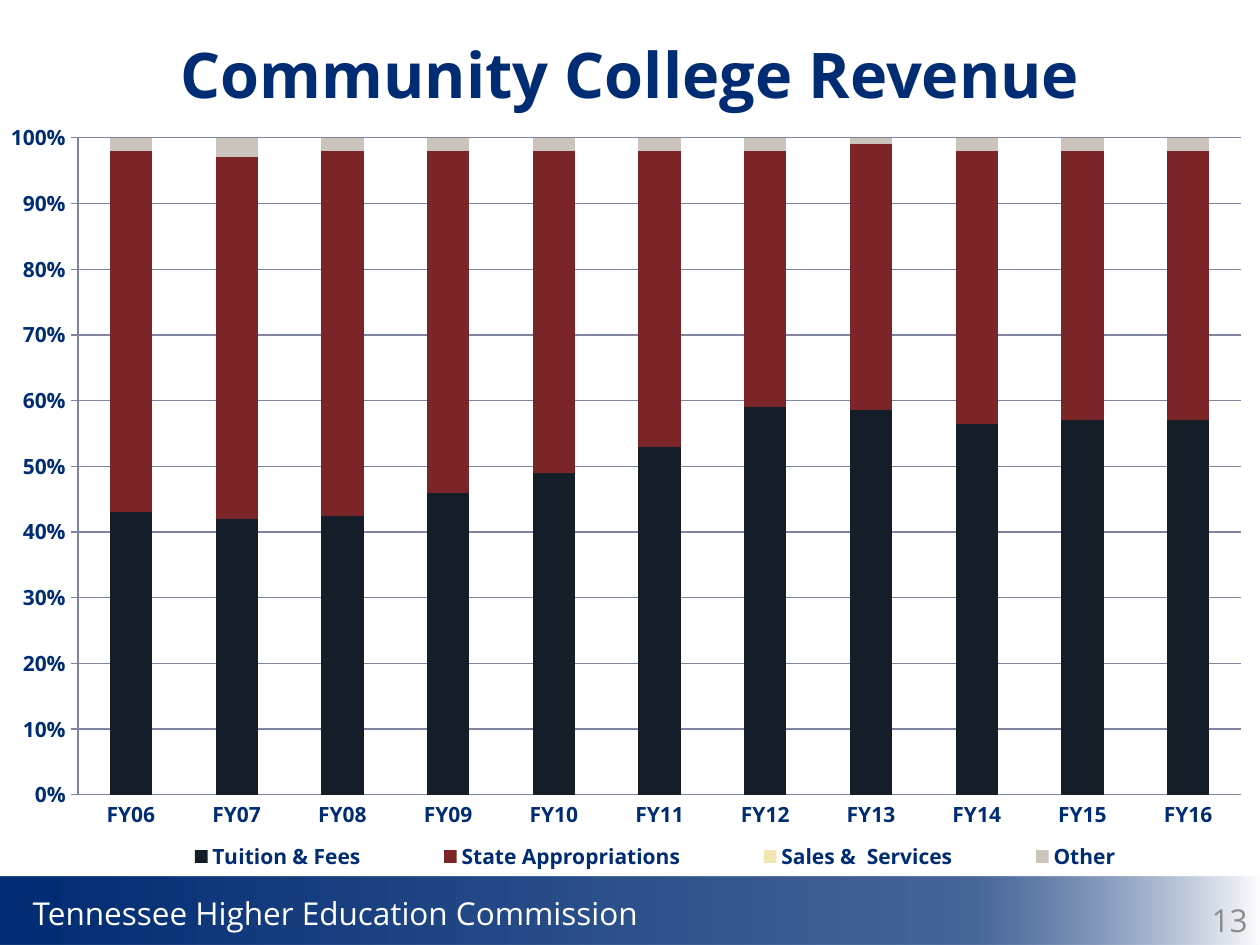
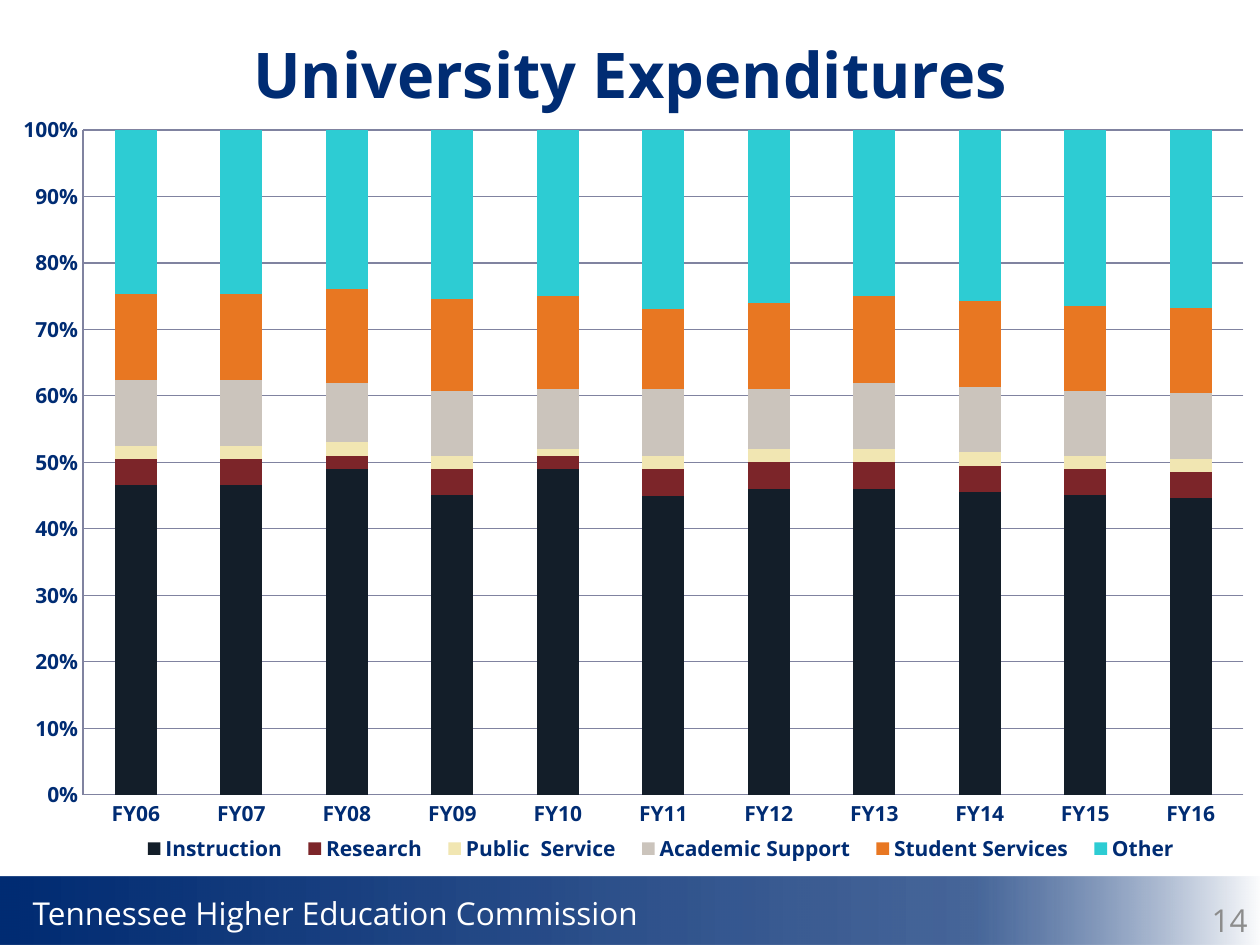
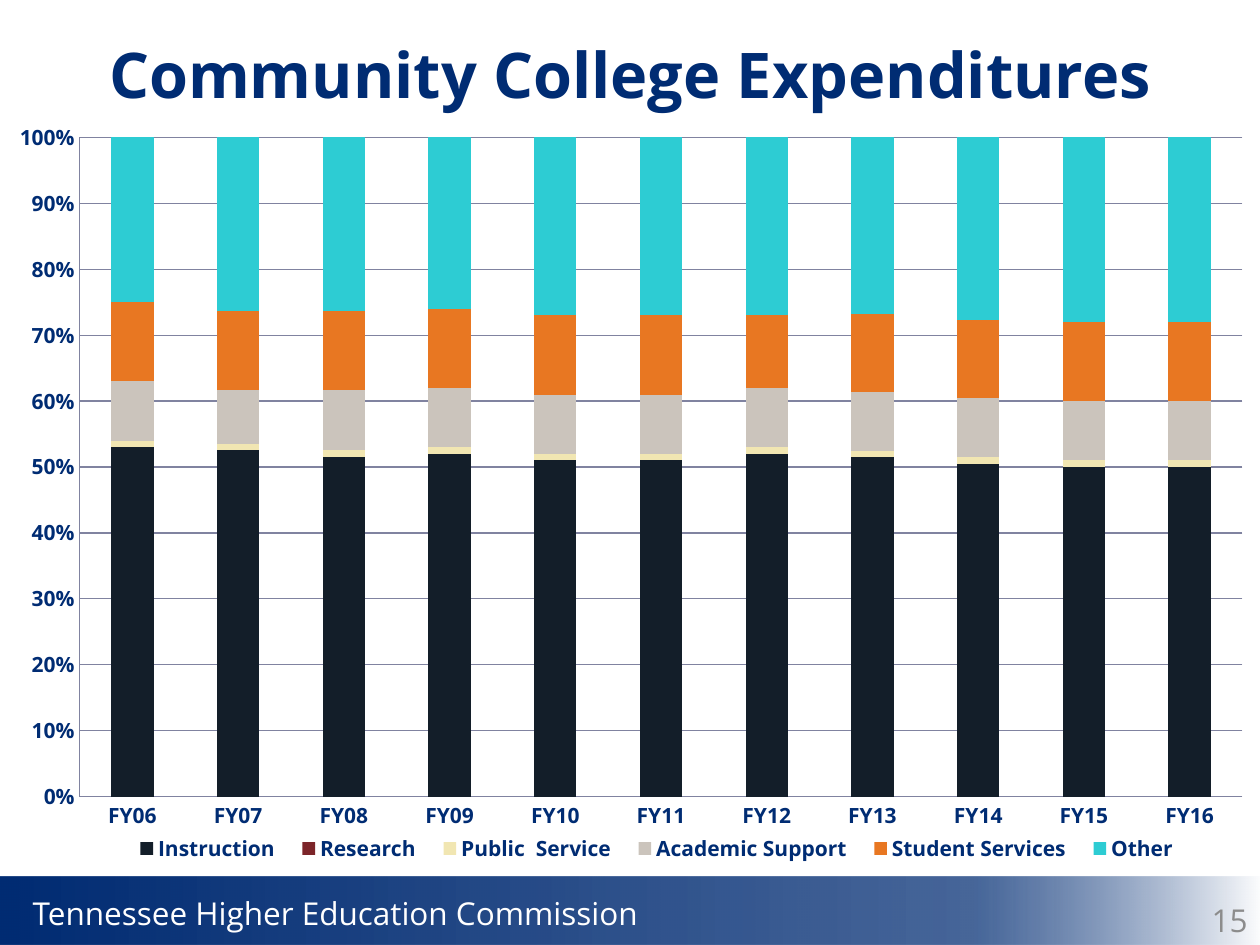
from dataclasses import dataclass

from lxml import etree
from pptx import Presentation
from pptx.chart import data
from pptx.dml import color
from pptx.enum import chart as kinds, shapes, text
from pptx.oxml import ns
from pptx.util import Cm, Pt

FONT = "Open Sans"
NAVY, WHITE, GREY, RULE = "002C73", "FFFFFF", "8C8C8C", "8083A0"
HUES = ["131E29", "7C2529", "F1E6B2", "CBC4BC", "E87722", "2DCCD3"]
YEARS = [f"FY{year:02}" for year in range(6, 17)]
FADE = [(0, NAVY, 100), (77, NAVY, 72), (100, WHITE, 100)]


@dataclass
class Box:
    left: float
    top: float
    width: float
    height: float

    def place(self) -> list:
        return [Cm(side) for side in (self.left, self.top, self.width, self.height)]


@dataclass
class Page:
    number: int
    title: str
    box: Box
    plot: tuple
    key: tuple
    rows: dict
    ticks: bool = False


BAND = Box(0, 17.68, 25.45, 1.37)
OWNER = Box(0.41, 17.9, 12.83, 1.02)
TITLE = Box(1.86, 0.2, 21.69, 2.54)
NUMBER = Box(19.48, 18.03, 5.92, 1.02)

PAGES = [
    Page(13, "Community College Revenue", Box(0, 2.33, 25.4, 15.44),
         (0.062, 0.029, 0.923, 0.858), (0.094, 0.94, 0.852, 0.055), {
             "Tuition & Fees": [43, 42, 42, 46, 49, 53, 59, 58, 57, 57, 57],
             "State Appropriations": [55, 55, 55, 52, 49, 45, 39, 40, 42, 41, 41],
             "Sales &  Services": [0] * 11,
             "Other": [2, 3, 2, 2, 2, 2, 2, 1, 2, 2, 2],
         }, ticks=True),
    Page(14, "University Expenditures", Box(0, 2.33, 25.4, 15.24),
         (0.066, 0.015, 0.921, 0.883), (0.102, 0.942, 0.845, 0.055), {
             "Instruction": [47, 47, 49, 46, 49, 45, 46, 46, 46, 46, 45],
             "Research": [4, 4, 2, 4, 2, 4, 4, 4, 4, 4, 4],
             "Public  Service": [2, 2, 2, 2, 1, 2, 2, 2, 2, 2, 2],
             "Academic Support": [10, 10, 9, 10, 9, 10, 9, 10, 10, 10, 10],
             "Student Services": [13, 13, 14, 14, 14, 12, 13, 13, 13, 13, 13],
             "Other": [25, 25, 24, 26, 25, 27, 26, 25, 26, 27, 27],
         }),
    Page(15, "Community College Expenditures", Box(0.03, 2.33, 25.4, 15.24),
         (0.062, 0.029, 0.923, 0.872), (0.094, 0.942, 0.852, 0.055), {
             "Instruction": [53, 52, 51, 52, 51, 51, 52, 52, 51, 50, 50],
             "Research": [0] * 11,
             "Public  Service": [1] * 11,
             "Academic Support": [9, 8, 9, 9, 9, 9, 9, 9, 9, 9, 9],
             "Student Services": [12, 12, 12, 12, 12, 12, 11, 12, 12, 12, 12],
             "Other": [25, 26, 26, 26, 27, 27, 27, 27, 28, 28, 28],
         }),
]


def paint(target, shade: str) -> None:
    target.rgb = color.RGBColor.from_string(shade)


def style(font, size: float, shade: str, bold: bool = False) -> None:
    font.name, font.size, font.bold = FONT, Pt(size), bold
    paint(font.color, shade)


def write(slide, box: Box, words: str, *, size: float = 18, shade: str = NAVY,
          bold: bool = False, align=text.PP_ALIGN.LEFT,
          anchor=text.MSO_ANCHOR.TOP, wrap: bool = True) -> None:
    frame = slide.shapes.add_textbox(*box.place()).text_frame
    frame.word_wrap = wrap
    frame.vertical_anchor = anchor
    line = frame.paragraphs[0]
    line.alignment = align
    run = line.add_run()
    run.text = words
    style(run.font, size, shade, bold)


def add_band(slide) -> None:
    band = slide.shapes.add_shape(shapes.MSO_SHAPE.RECTANGLE, *BAND.place())
    band.shadow.inherit = False
    band.line.fill.background()
    band.fill.gradient()
    band.fill.gradient_angle = 0
    stops = next(band.element.iter(ns.qn("a:gsLst")))
    for old in list(stops):
        stops.remove(old)
    for spot, shade, alpha in FADE:
        stop = etree.SubElement(stops, ns.qn("a:gs"), pos=str(spot * 1000))
        tint = etree.SubElement(stop, ns.qn("a:srgbClr"), val=shade)
        if alpha < 100:
            etree.SubElement(tint, ns.qn("a:alpha"), val=str(alpha * 1000))


def arrange(chart, tag: str, spot: int, frame: tuple, inner: bool = False) -> None:
    part = next(chart.element.iter(ns.qn(tag)))
    for old in part.findall(ns.qn("c:layout")):
        part.remove(old)
    layout = etree.Element(ns.qn("c:layout"))
    part.insert(spot, layout)
    manual = etree.SubElement(layout, ns.qn("c:manualLayout"))
    facts = [("layoutTarget", "inner")] if inner else []
    facts += [("xMode", "edge"), ("yMode", "edge"), *zip("xywh", frame)]
    for name, value in facts:
        etree.SubElement(manual, ns.qn(f"c:{name}"), val=str(value))


def rule(line) -> None:
    paint(line.color, RULE)
    line.width = Pt(0.75)


def add_bars(slide, page: Page) -> None:
    table = data.CategoryChartData()
    table.categories = YEARS
    for name, values in page.rows.items():
        table.add_series(name, values)
    chart = slide.shapes.add_chart(
        kinds.XL_CHART_TYPE.COLUMN_STACKED_100, *page.box.place(), table).chart
    style(chart.font, 10, NAVY)
    chart.has_title = False
    chart.has_legend = True
    chart.legend.position = kinds.XL_LEGEND_POSITION.BOTTOM
    chart.legend.include_in_layout = False
    style(chart.legend.font, 12, NAVY, True)
    bars = chart.plots[0]
    bars.gap_width, bars.overlap, bars.vary_by_categories = 150, 100, False
    for row, shade in zip(bars.series, HUES):
        row.format.fill.solid()
        paint(row.format.fill.fore_color, shade)
        row.format.line.fill.background()
        row.invert_if_negative = False
    marks = kinds.XL_TICK_MARK
    for axis in (chart.category_axis, chart.value_axis):
        style(axis.tick_labels.font, 12, NAVY, True)
        rule(axis.format.line)
        axis.major_tick_mark = axis.minor_tick_mark = marks.NONE
    scale = chart.value_axis
    if page.ticks:
        scale.major_tick_mark = marks.OUTSIDE
    scale.minimum_scale, scale.maximum_scale, scale.major_unit = 0, 1, 0.1
    scale.has_major_gridlines = True
    rule(scale.major_gridlines.format.line)
    scale.tick_labels.number_format = "0%"
    scale.tick_labels.number_format_is_linked = False
    arrange(chart, "c:plotArea", 0, page.plot, inner=True)
    arrange(chart, "c:legend", 1, page.key)


def add_page(deck, page: Page) -> None:
    slide = deck.slides.add_slide(deck.slide_layouts[6])
    add_band(slide)
    write(slide, OWNER, "Tennessee Higher Education Commission", shade=WHITE, wrap=False)
    write(slide, TITLE, page.title, size=36, bold=True,
          align=text.PP_ALIGN.CENTER, anchor=text.MSO_ANCHOR.MIDDLE)
    add_bars(slide, page)
    write(slide, NUMBER, str(page.number), shade=GREY, align=text.PP_ALIGN.RIGHT)


def main() -> None:
    deck = Presentation()
    deck.slide_width, deck.slide_height = Cm(25.4), Cm(19.05)
    for page in PAGES:
        add_page(deck, page)
    deck.save("out.pptx")


if __name__ == "__main__":
    main()
